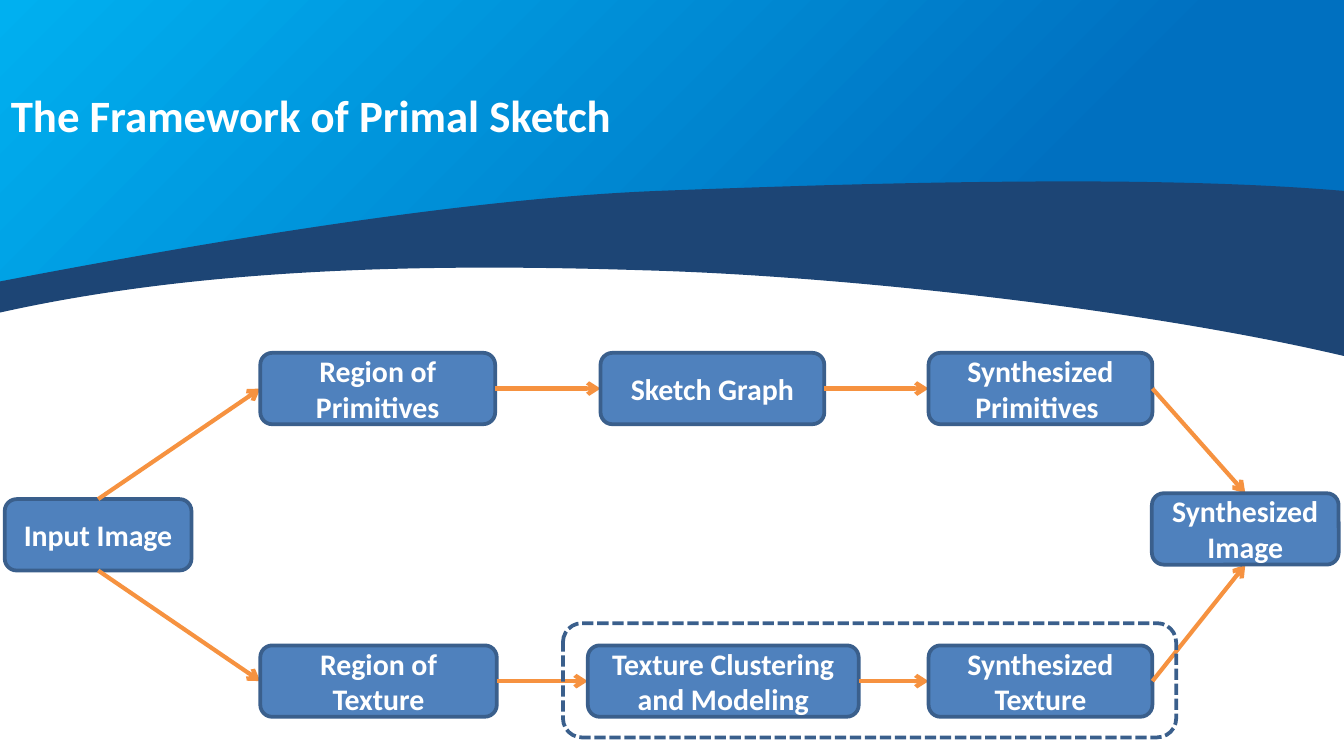
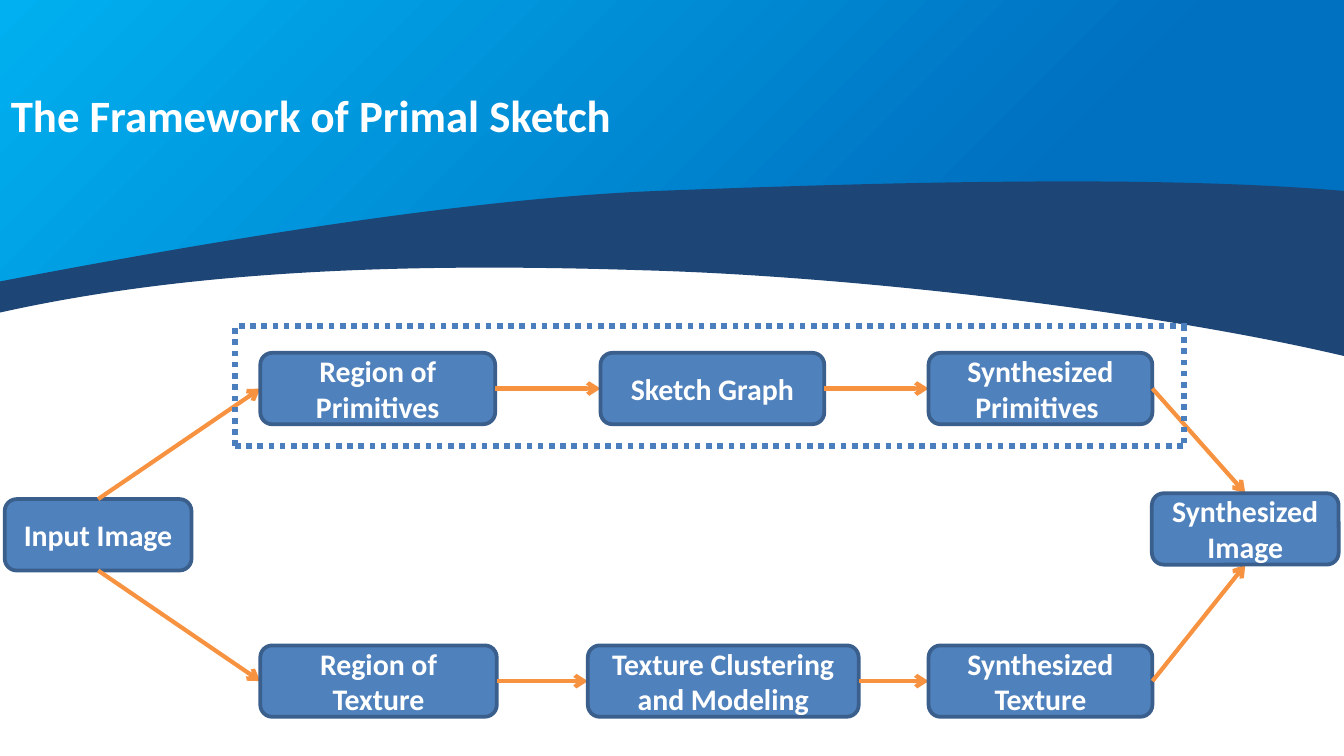
from lxml.etree import SubElement
from pptx import Presentation
from pptx.dml.color import RGBColor
from pptx.enum.dml import MSO_LINE
from pptx.enum.shapes import MSO_CONNECTOR, MSO_SHAPE
from pptx.enum.text import MSO_ANCHOR, MSO_AUTO_SIZE, PP_ALIGN
from pptx.oxml.ns import qn
from pptx.util import Cm, Pt

WIDE, HIGH = 25.4, 14.29
FONT = "Calibri"
WHITE, NAVY = "FFFFFF", "1D4575"
SKY, BLUE = "00B0F0", "0070C0"
FILL, EDGE = "4F81BD", "3A5F8C"
ORANGE, DOT = "F69240", "4B7EBC"
TOP, LEFT, BOTTOM, RIGHT = range(4)
NODE = 1.35  # height of every node, in cm

# Outlines in cm: one pair is a corner, three pairs are a Bézier curve.
SKY_WAVE = [
    [(0, 0)], [(WIDE, 0)], [(WIDE, 3.66)],
    [(23.9, 3.51), (22.1, 3.48), (20.24, 3.48)],
    [(17.45, 3.48), (14.55, 3.58), (12.45, 3.66)],
    [(8.69, 3.78), (3.71, 4.67), (0, 5.36)],
]
NAVY_WAVE = [
    [(20.22, 3.43)],
    [(17.4, 3.43), (14.5, 3.53), (12.42, 3.61)],
    [(8.64, 3.76), (3.66, 4.62), (-0.05, 5.33)],
    [(-0.05, 5.92)],
    [(3.81, 5.05), (8.15, 4.98), (12.17, 5.11)],
    [(15.9, 5.21), (21.62, 5.84), (WIDE, 6.73)],
    [(WIDE, 3.61)],
    [(23.88, 3.48), (22.07, 3.43), (20.22, 3.43)],
]

# Left and width in cm, and how far down the free height the node sits.
NODES = {
    "Input Image": (0, 3.53, 0.5),
    "Region of Primitives": (4.83, 4.44, 0),
    "Region of Texture": (4.83, 4.47, 1),
    "Sketch Graph": (11.26, 4.23, 0),
    "Texture Clustering and Modeling": (11.02, 5.12, 1),
    "Synthesized Primitives ": (17.46, 4.23, 0),
    "Synthesized Texture": (17.46, 4.23, 1),
    "Synthesized Image": (21.68, 3.53, 0.48),
}
LINKS = [
    ("Input Image", TOP, "Region of Primitives", LEFT),
    ("Input Image", BOTTOM, "Region of Texture", LEFT),
    ("Region of Primitives", RIGHT, "Sketch Graph", LEFT),
    ("Region of Texture", RIGHT, "Texture Clustering and Modeling", LEFT),
    ("Sketch Graph", RIGHT, "Synthesized Primitives ", LEFT),
    ("Texture Clustering and Modeling", RIGHT, "Synthesized Texture", LEFT),
    ("Synthesized Primitives ", RIGHT, "Synthesized Image", TOP),
    ("Synthesized Texture", RIGHT, "Synthesized Image", BOTTOM),
]


def paint(hue):
    return RGBColor.from_string(hue)


def write(shape, text, size=16, hue=WHITE, bold=True, align=PP_ALIGN.CENTER,
          anchor=MSO_ANCHOR.MIDDLE, space=None):
    frame = shape.text_frame
    frame.word_wrap = True
    frame.vertical_anchor = anchor
    para = frame.paragraphs[0]
    para.alignment, para.line_spacing = align, space
    run = para.add_run()
    run.text = text
    font = run.font
    font.name, font.size, font.bold = FONT, Pt(size), bold
    font.color.rgb = paint(hue)


def wave(slide, outline):
    """Draw the outline as straight lines, then bend each group of three."""
    first, *rest = [(Cm(x), Cm(y)) for part in outline for x, y in part]
    pen = slide.shapes.build_freeform(*first)
    pen.add_line_segments(rest, close=True)
    shape = pen.convert_to_shape()
    lines = iter(list(shape.element.iter(qn("a:lnTo"))))
    for part in outline[1:]:
        head, *tail = [next(lines) for _ in part]
        if tail:
            curve = head.makeelement(qn("a:cubicBezTo"))
            head.addprevious(curve)
            for line in (head, *tail):
                curve.append(line[0])
                line.getparent().remove(line)
    shape.shadow.inherit = False
    shape.line.fill.background()
    return shape


def header(slide, text):
    """Draw the two waves and lay the title over them."""
    fill = wave(slide, SKY_WAVE).fill
    fill.gradient()
    fill.gradient_angle = 315
    for stop, hue, place in zip(fill.gradient_stops, (SKY, BLUE), (0, 0.76)):
        stop.color.rgb = paint(hue)
        stop.position = place
    fill = wave(slide, NAVY_WAVE).fill
    fill.solid()
    fill.fore_color.rgb = paint(NAVY)

    title = slide.shapes.title
    title.left, title.top = Cm(-0.05), Cm(0)
    title.width, title.height = Cm(15.98), Cm(2.82)
    write(title, text, size=24, align=PP_ALIGN.LEFT, anchor=MSO_ANCHOR.TOP,
          space=2.5)
    title.text_frame.auto_size = MSO_AUTO_SIZE.SHAPE_TO_FIT_TEXT
    title.element.getparent().append(title.element)


def panel(slide, box, fill=None, dash=None):
    shape = slide.shapes.add_shape(MSO_SHAPE.ROUNDED_RECTANGLE,
                                   *(Cm(v) for v in box))
    shape.shadow.inherit = False
    if fill:
        shape.fill.solid()
        shape.fill.fore_color.rgb = paint(fill)
    else:
        shape.fill.background()
    shape.line.color.rgb = paint(EDGE)
    shape.line.width = Pt(2)
    if dash:
        shape.line.dash_style = dash
    return shape


def stroke(slide, start=(0, 0), end=(0, 0), hue=ORANGE, width=2.25,
           dash=None, arrow=False):
    line = slide.shapes.add_connector(MSO_CONNECTOR.STRAIGHT,
                                      *(Cm(v) for v in (*start, *end)))
    line.line.color.rgb = paint(hue)
    line.line.width = Pt(width)
    if dash:
        line.line.dash_style = dash
    props = line.element.spPr
    if arrow:
        SubElement(props.find(qn("a:ln")), qn("a:tailEnd"), type="arrow")
    SubElement(props, qn("a:effectLst"))
    return line


def flow(slide, box):
    """Place the nodes in the box and join them with arrows."""
    left, top, _, high = box
    nodes = {}
    for text, (x, wide, drop) in NODES.items():
        y = top + drop * (high - NODE)
        nodes[text] = panel(slide, (left + x, y, wide, NODE), fill=FILL)
        write(nodes[text], text)
    for source, out, target, into in LINKS:
        line = stroke(slide, arrow=True)
        line.begin_connect(nodes[source], out)
        line.end_connect(nodes[target], into)
        nodes[target].element.addprevious(line.element)


def fence(slide, box, over=0.05):
    """Enclose the box with four dotted lines that overlap at two corners."""
    left, top, wide, high = box
    right, base = left + wide, top + high
    sides = [
        ((left, base), (right + over, base)),
        ((right, top), (right, base - over)),
        ((right + over, top), (left, top)),
        ((left, base), (left, top - over)),
    ]
    for start, end in sides:
        stroke(slide, start, end, hue=DOT, width=3, dash=MSO_LINE.ROUND_DOT)


def sketch(deck):
    slide = deck.slides.add_slide(deck.slide_layouts[5])
    header(slide, "The Framework of Primal Sketch")
    flow(slide, (0.09, 6.67, 25.21, 6.88))
    return slide


def main():
    deck = Presentation()
    deck.slide_width, deck.slide_height = Cm(WIDE), Cm(HIGH)
    panel(sketch(deck), (10.64, 11.78, 11.59, 2.16), dash=MSO_LINE.SQUARE_DOT)
    fence(sketch(deck), (4.44, 6.16, 17.94, 2.27))
    deck.save("out.pptx")


if __name__ == "__main__":
    main()
